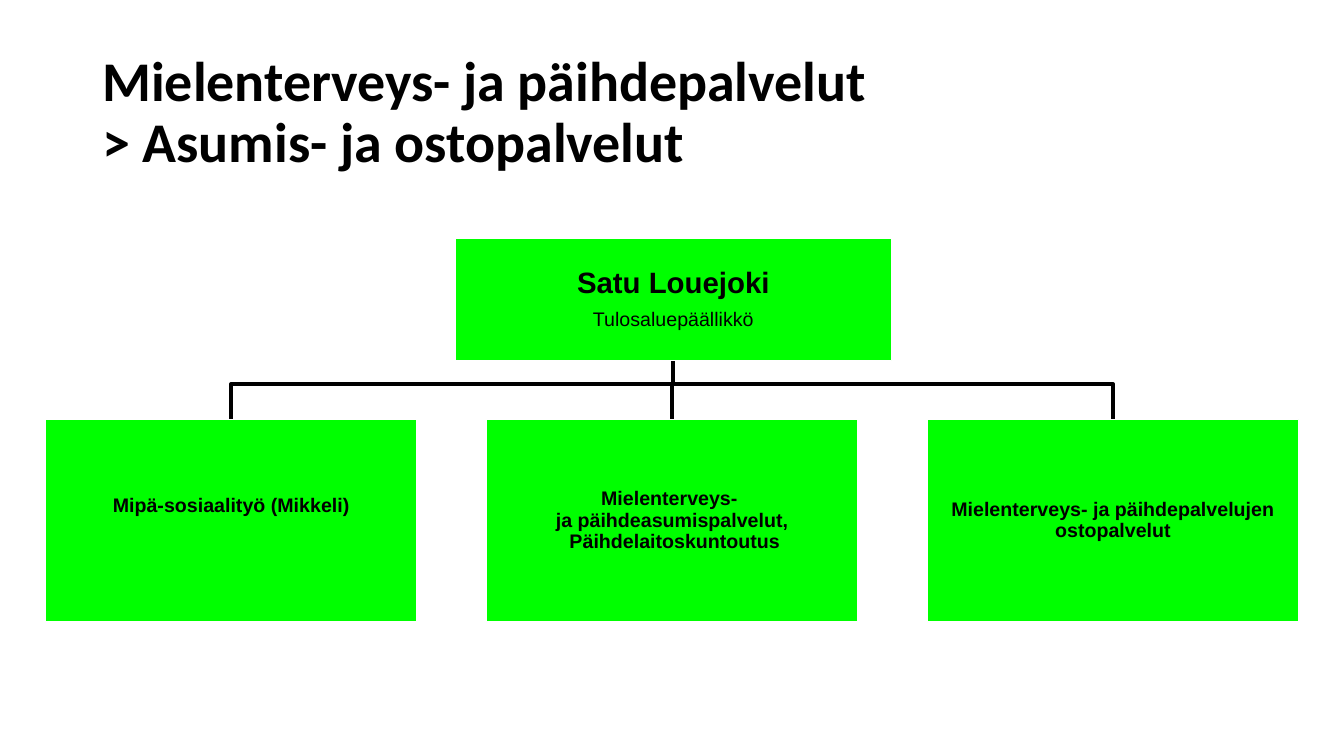
import pptx
import pptx.util
import pptx.dml.color
import pptx.enum.shapes
import pptx.enum.text

Cm = pptx.util.Cm
Pt = pptx.util.Pt
COLORS = {"box": "00FF00", "edge": "FFFFFF", "ink": "000000"}


def write(frame, text, size=14, bold=True, font="Arial", align="CENTER", after=0, new=False):
    paragraph = frame.add_paragraph() if new else frame.paragraphs[0]
    paragraph.text = text
    paragraph.alignment = getattr(pptx.enum.text.PP_ALIGN, align)
    paragraph.line_spacing = 0.9
    paragraph.space_after = Pt(after)
    for run in paragraph.runs:
        run.font.size = Pt(size)
        run.font.bold = bold
        run.font.name = font
        run.font.color.rgb = pptx.dml.color.RGBColor.from_string(COLORS["ink"])


presentation = pptx.Presentation()
presentation.slide_width = Cm(33.87)
presentation.slide_height = Cm(19.05)
slide = presentation.slides.add_slide(presentation.slide_layouts[6])

title = slide.shapes.add_textbox(Cm(2.33), Cm(1.03), Cm(30.38), Cm(3.68)).text_frame
title.word_wrap = True
title.vertical_anchor = pptx.enum.text.MSO_ANCHOR.MIDDLE
write(title, "Mielenterveys- ja päihdepalvelut\n> Asumis- ja ostopalvelut",
      size=40, font="Calibri", align="LEFT")

unit_left, unit_step, unit_top, unit_width, unit_height = 1.15, 11.11, 10.57, 9.36, 5.11
unit_names = [
    "Mipä-sosiaalityö (Mikkeli)",
    "Mielenterveys- \nja päihdeasumispalvelut,\n Päihdelaitoskuntoutus",
    "Mielenterveys- ja päihdepalvelujen ostopalvelut",
]
manager_left, manager_top, manager_width, manager_height = 11.47, 6, 11, 3.09
places = [(manager_left, manager_top, manager_width, manager_height)]
places += [(unit_left + i * unit_step, unit_top, unit_width, unit_height)
           for i in range(len(unit_names))]

bar_y = 9.68
manager_center = manager_left + manager_width / 2
manager_bottom = manager_top + manager_height
for left, top, width, height in reversed(places[1:]):
    center = left + width / 2
    builder = slide.shapes.build_freeform(Cm(manager_center), Cm(manager_bottom))
    bends = [(manager_center, bar_y), (center, bar_y), (center, top)]
    builder.add_line_segments([(Cm(x), Cm(y)) for x, y in bends], close=False)
    branch = builder.convert_to_shape()
    branch.shadow.inherit = False
    branch.fill.background()
    branch.line.width = Pt(3)
    branch.line.color.rgb = pptx.dml.color.RGBColor.from_string(COLORS["ink"])

boxes = []
for place in places:
    box = slide.shapes.add_shape(
        pptx.enum.shapes.MSO_SHAPE.RECTANGLE, *[Cm(length) for length in place])
    box.shadow.inherit = False
    box.fill.solid()
    box.fill.fore_color.rgb = pptx.dml.color.RGBColor.from_string(COLORS["box"])
    box.line.color.rgb = pptx.dml.color.RGBColor.from_string(COLORS["edge"])
    box.line.width = Pt(1)
    frame = box.text_frame
    frame.word_wrap = True
    frame.vertical_anchor = pptx.enum.text.MSO_ANCHOR.MIDDLE
    frame.margin_left = frame.margin_right = Cm(0.03)
    frame.margin_top = frame.margin_bottom = Cm(0.03)
    boxes.append(box)

manager, *units = boxes
write(manager.text_frame, "Satu Louejoki", size=21, after=7.35)
write(manager.text_frame, "Tulosaluepäällikkö", bold=False, after=4.9, new=True)
for unit, name in zip(units, unit_names):
    write(unit.text_frame, name, after=4.9)
units[0].text_frame.margin_bottom = Cm(0.77)

presentation.save("out.pptx")
